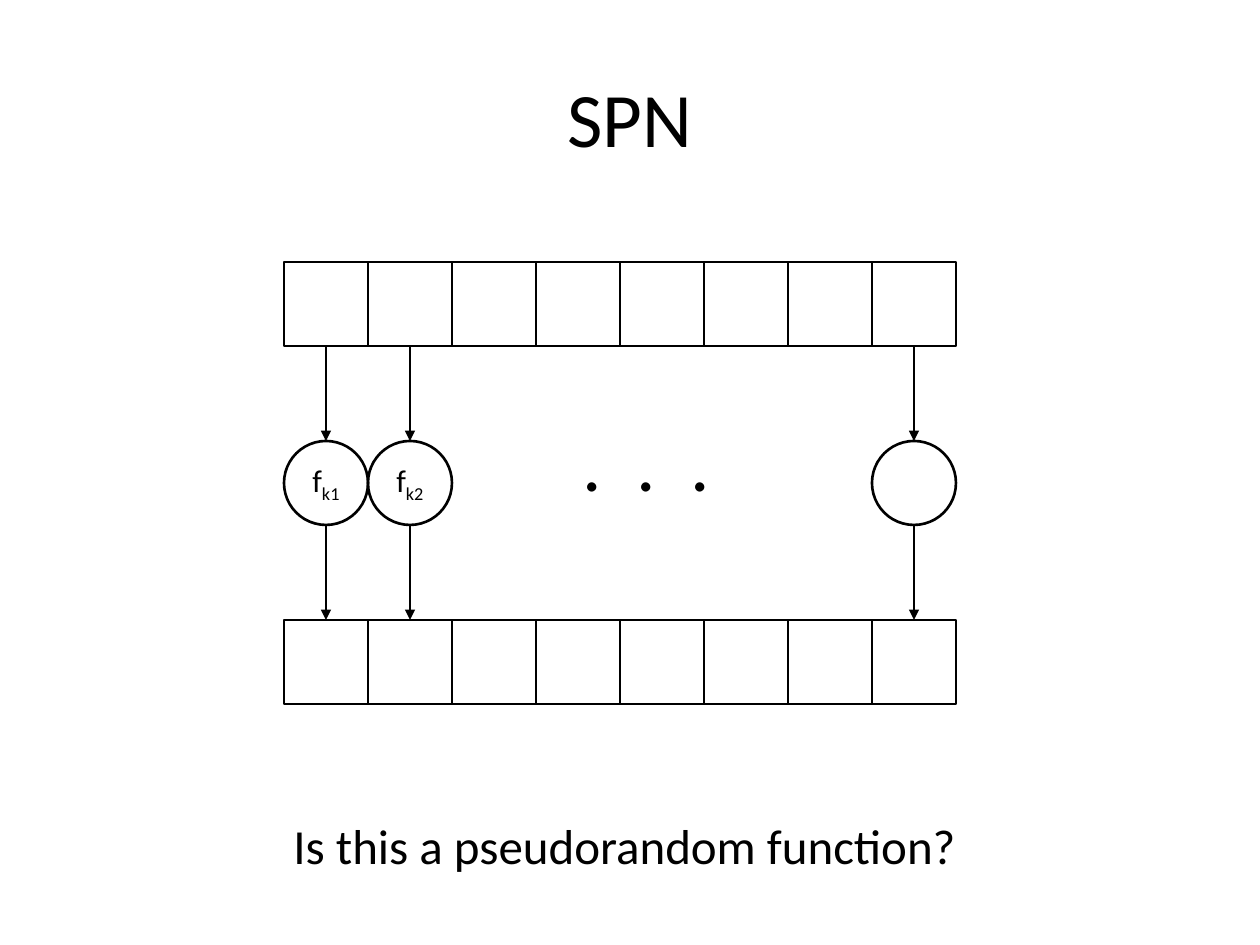
from dataclasses import dataclass
from lxml import etree
from pptx import Presentation
from pptx.dml.color import RGBColor
from pptx.enum.shapes import MSO_CONNECTOR, MSO_SHAPE
from pptx.enum.text import MSO_ANCHOR, MSO_AUTO_SIZE, PP_ALIGN
from pptx.oxml.ns import qn
from pptx.util import Emu, Pt

RECT, OVAL = MSO_SHAPE.RECTANGLE, MSO_SHAPE.OVAL
LINE = MSO_CONNECTOR.STRAIGHT
CENTER, MIDDLE = PP_ALIGN.CENTER, MSO_ANCHOR.MIDDLE
GROW = MSO_AUTO_SIZE.SHAPE_TO_FIT_TEXT


@dataclass
class Theme:
    ink: RGBColor = RGBColor(0, 0, 0)
    font: str = "Calibri"
    title: int = 44
    dots: int = 44
    ask: int = 28
    label: int = 18
    line: float = 1.5


TITLE = "SPN"
NOTES = [
    (".  .  .", (570, 408, 155, 106), Theme.dots),
    ("Is this a pseudorandom function?", (281, 809, 696, 72), Theme.ask),
]
NODES = [(0, "f", "k1"), (1, "f", "k2"), (7, "", "")]
COUNT, CELL, LEFT = 8, 84, 284
TOP, MID, LOW = 262, 441, 620


def px(n):
    return Emu(n * 914400 // 126)


def add_run(para, text, size):
    run = para.add_run()
    run.text = text
    run.font.name = Theme.font
    run.font.size = Pt(size)
    run.font.color.rgb = Theme.ink
    return run


def ink_line(item):
    item.line.color.rgb = Theme.ink
    item.line.width = Pt(Theme.line)


def add_cell(slide, kind, col, top):
    cell = slide.shapes.add_shape(
        kind, px(LEFT + col * CELL), px(top), px(CELL), px(CELL))
    cell.shadow.inherit = False
    cell.fill.background()
    ink_line(cell)
    return cell


def add_arrow(slide, col, start, end):
    x = px(LEFT + col * CELL + CELL // 2)
    arrow = slide.shapes.add_connector(LINE, x, px(start), x, px(end))
    ink_line(arrow)
    etree.SubElement(arrow.line._get_or_add_ln(), qn("a:tailEnd"), type="triangle")
    etree.SubElement(arrow._element.spPr, qn("a:effectLst"))


def add_node(slide, col, base, sub):
    node = add_cell(slide, OVAL, col, MID)
    if base:
        frame = node.text_frame
        frame.vertical_anchor = MIDDLE
        frame.word_wrap = False
        para = frame.paragraphs[0]
        para.alignment = CENTER
        add_run(para, base, Theme.label)
        low = add_run(para, sub, Theme.label)
        low.font._element.set("baseline", "-25000")
    add_arrow(slide, col, TOP + CELL, MID)
    add_arrow(slide, col, MID + CELL, LOW)


def main():
    deck = Presentation()
    deck.slide_width, deck.slide_height = px(1260), px(945)
    slide = deck.slides.add_slide(deck.slide_layouts[5])

    head = slide.shapes.title
    head.left, head.top, head.width, head.height = map(px, (63, 38, 1134, 158))
    head.text_frame.vertical_anchor = MIDDLE
    para = head.text_frame.paragraphs[0]
    para.alignment = CENTER
    add_run(para, TITLE, Theme.title)

    for top in (TOP, LOW):
        for col in range(COUNT):
            add_cell(slide, RECT, col, top)
    for node in NODES:
        add_node(slide, *node)
    for text, area, size in NOTES:
        frame = slide.shapes.add_textbox(*map(px, area)).text_frame
        frame.word_wrap = False
        frame.auto_size = GROW
        add_run(frame.paragraphs[0], text, size)

    deck.save("out.pptx")


if __name__ == "__main__":
    main()
